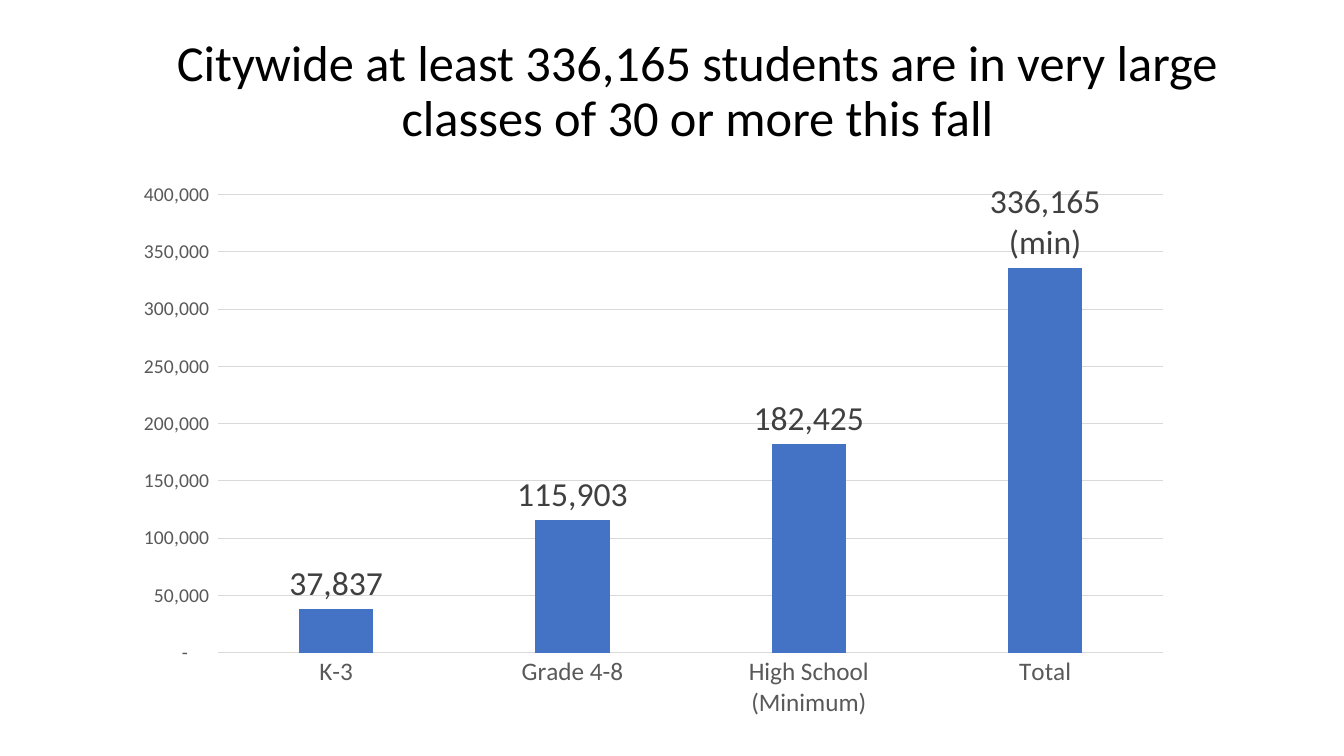
from pptx import Presentation
from pptx.chart.data import CategoryChartData
from pptx.dml.color import RGBColor
from pptx.enum.chart import XL_CHART_TYPE, XL_LABEL_POSITION, XL_TICK_MARK
from pptx.enum.text import MSO_ANCHOR, MSO_AUTO_SIZE, PP_ALIGN
from pptx.util import Inches, Pt

BLACK = RGBColor(0x00, 0x00, 0x00)
LABEL_GRAY = RGBColor(0x40, 0x40, 0x40)
AXIS_GRAY = RGBColor(0x59, 0x59, 0x59)
GRID_GRAY = RGBColor(0xD9, 0xD9, 0xD9)
BLUE = RGBColor(0x44, 0x72, 0xC4)
FONT = "Calibri"
NUMBER_FORMAT = '_(* #,##0_);_(* \\(#,##0\\);_(* "-"??_);_(@_)'


def style_font(font, size, color):
    font.name = FONT
    font.size = Pt(size)
    font.bold = False
    font.color.rgb = color


presentation = Presentation()
presentation.slide_width = Inches(13.33)
presentation.slide_height = Inches(7.5)
slide = presentation.slides.add_slide(presentation.slide_layouts[5])

# Title, raised within its box by a deep bottom margin
title = slide.shapes.title
title.left, title.top = Inches(1.17), Inches(0.47)
title.width, title.height = Inches(11.5), Inches(1.45)
title_frame = title.text_frame
title_frame.word_wrap = True
title_frame.auto_size = MSO_AUTO_SIZE.NONE
title_frame.vertical_anchor = MSO_ANCHOR.MIDDLE
title_frame.margin_bottom = Inches(0.6)
paragraph = title_frame.paragraphs[0]
paragraph.alignment = PP_ALIGN.CENTER
paragraph.line_spacing = 0.9
run = paragraph.add_run()
run.text = "Citywide at least 336,165 students are in very large classes of 30 or more this fall"
style_font(run.font, 36, BLACK)

# Column chart
chart_data = CategoryChartData(number_format=NUMBER_FORMAT)
chart_data.categories = ["K-3", "Grade 4-8", "High School (Minimum)", "Total"]
chart_data.add_series("Series 1", [37837, 115903, 182425, 336165])
chart = slide.shapes.add_chart(
    XL_CHART_TYPE.COLUMN_CLUSTERED,
    Inches(1.17), Inches(1.7), Inches(10.58), Inches(5.53), chart_data,
).chart
chart.has_title = False
chart.has_legend = False
style_font(chart.font, 10, BLACK)

# Axes and gridlines
for axis, size in ((chart.category_axis, 18), (chart.value_axis, 14)):
    axis.major_tick_mark = XL_TICK_MARK.NONE
    axis.minor_tick_mark = XL_TICK_MARK.NONE
    style_font(axis.tick_labels.font, size, AXIS_GRAY)
chart.value_axis.format.line.fill.background()
chart.value_axis.tick_labels.number_format = NUMBER_FORMAT
chart.value_axis.tick_labels.number_format_is_linked = False
chart.value_axis.has_major_gridlines = True
for line in (chart.category_axis.format.line, chart.value_axis.major_gridlines.format.line):
    line.color.rgb = GRID_GRAY
    line.width = Pt(0.75)

# Columns
plot = chart.plots[0]
plot.gap_width = 219
plot.overlap = -27
plot.vary_by_categories = False
series = plot.series[0]
series.format.fill.solid()
series.format.fill.fore_color.rgb = BLUE

# Value labels, with a worded one on the total
labels = series.data_labels
labels.show_value = True
labels.position = XL_LABEL_POSITION.OUTSIDE_END
labels.number_format = NUMBER_FORMAT
labels.number_format_is_linked = False
style_font(labels.font, 24, LABEL_GRAY)
total_label = series.points[3].data_label
total_run = total_label.text_frame.paragraphs[0].add_run()
total_run.text = "336,165 (min)"
style_font(total_run.font, 24, LABEL_GRAY)
total_label.position = XL_LABEL_POSITION.OUTSIDE_END

presentation.save("out.pptx")
